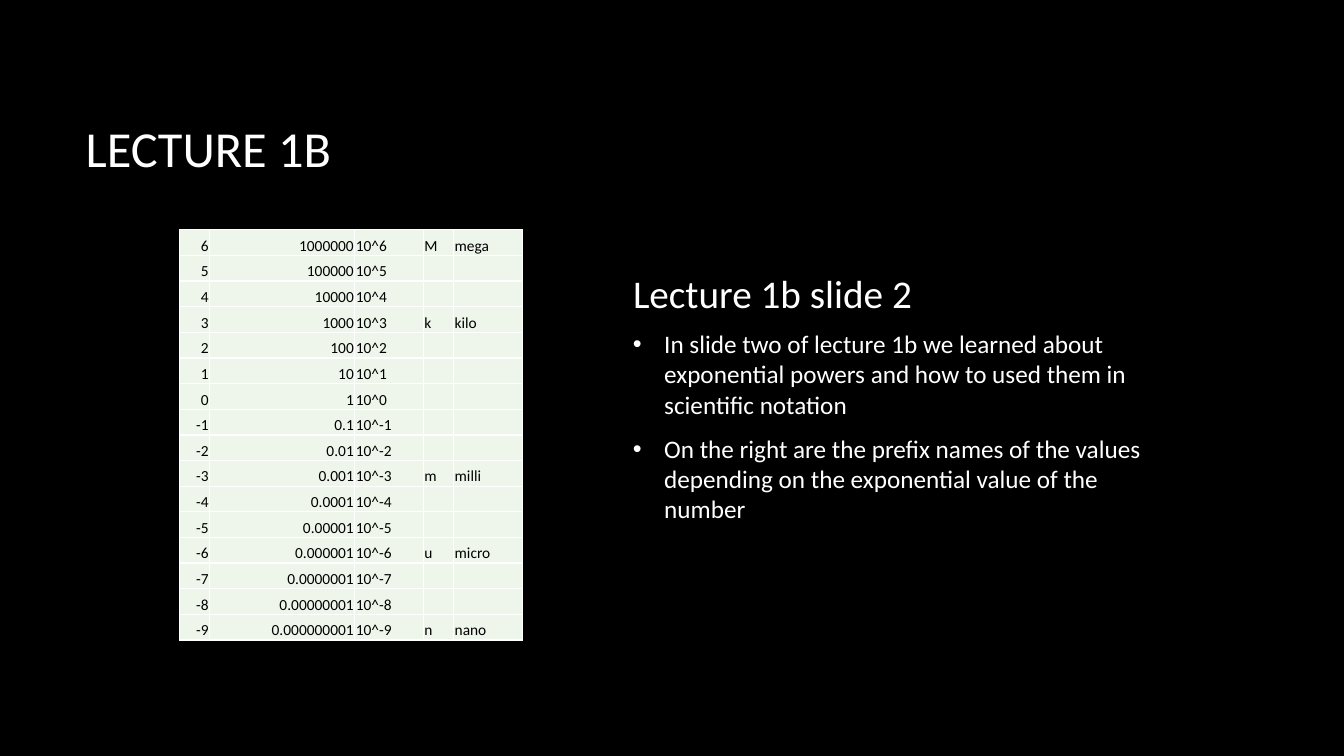
from pptx import Presentation
from pptx.dml.color import RGBColor
from pptx.enum.text import MSO_ANCHOR, MSO_AUTO_SIZE, PP_ALIGN
from pptx.oxml.ns import qn
from pptx.util import Inches, Pt
from lxml import etree

LEFT, RIGHT = PP_ALIGN.LEFT, PP_ALIGN.RIGHT
TOP, MIDDLE, BOTTOM = MSO_ANCHOR.TOP, MSO_ANCHOR.MIDDLE, MSO_ANCHOR.BOTTOM
NO_AUTOFIT = MSO_AUTO_SIZE.NONE
TITLE_ONLY = 5

PREFIXES = {6: ("M", "mega"), 3: ("k", "kilo"), -3: ("m", "milli"),
            -6: ("u", "micro"), -9: ("n", "nano")}
EXPONENTS = range(6, -10, -1)
COLUMN_WIDTHS = [0.3, 1.44, 0.68, 0.3, 0.68]
COLUMN_ALIGNMENTS = [RIGHT, RIGHT, LEFT, LEFT, LEFT]
TABLE_HEIGHT = 4.07


def color(value):
    return RGBColor.from_string(value)


def apply_format(target, values):
    for name, value in values.items():
        setattr(target, name, value)


class LectureSlide:
    font_name = "Calibri"
    text_color = "FFFFFF"
    cell_text_color = "000000"
    cell_fill = "EEF6EB"
    border_color = "FFFFFF"

    def __init__(self, deck, background):
        self.page = deck.slides.add_slide(deck.slide_layouts[TITLE_ONLY])
        self.page.background.fill.solid()
        self.page.background.fill.fore_color.rgb = color(background)

    def add_span(self, para, text, size, text_color):
        span = para.add_run()
        span.text = text
        apply_format(span.font, {"name": self.font_name, "size": Pt(size)})
        span.font.color.rgb = color(text_color)

    def place(self, box, left, top, width, height, anchor):
        apply_format(box, {"left": Inches(left), "top": Inches(top),
                           "width": Inches(width), "height": Inches(height)})
        apply_format(box.text_frame, {"word_wrap": True, "auto_size": NO_AUTOFIT,
                                      "vertical_anchor": anchor})

    def title(self, text, *bounds):
        box = self.page.shapes.title
        self.place(box, *bounds, MIDDLE)
        para = box.text_frame.paragraphs[0]
        para.alignment = LEFT
        self.add_span(para, text, 36, self.text_color)

    def text(self, lines, size, *bounds, anchor=TOP, bulleted=False):
        box = self.page.shapes.add_textbox(0, 0, 0, 0)
        self.place(box, *bounds, anchor)
        frame = box.text_frame
        for index, line in enumerate(lines):
            para = frame.add_paragraph() if index else frame.paragraphs[0]
            apply_format(para, {"alignment": LEFT, "space_after": Pt(10)})
            if bulleted:
                self.bullet(para)
            self.add_span(para, line, size, self.text_color)

    def bullet(self, para):
        properties = para._p.get_or_add_pPr()
        indent = Inches(0.31)
        properties.set("marL", str(indent))
        properties.set("indent", str(-indent))
        bullet_color = etree.SubElement(properties, qn("a:buClr"))
        etree.SubElement(bullet_color, qn("a:srgbClr"), val=self.text_color)
        etree.SubElement(properties, qn("a:buFont"), typeface="Arial")
        etree.SubElement(properties, qn("a:buChar"), char="•")

    def table(self, rows, left, top, height):
        frame = self.page.shapes.add_table(
            len(rows), len(COLUMN_WIDTHS), Inches(left), Inches(top),
            Inches(sum(COLUMN_WIDTHS)), Inches(height))
        grid = frame.table
        apply_format(grid, {"first_row": False, "horz_banding": False})
        for column, width in zip(grid.columns, COLUMN_WIDTHS):
            column.width = Inches(width)
        for row, values in zip(grid.rows, rows):
            for cell, value, alignment in zip(row.cells, values, COLUMN_ALIGNMENTS):
                self.cell(cell, value, alignment)

    def cell(self, cell, value, alignment):
        inset = Inches(0.01)
        apply_format(cell, {"margin_left": inset, "margin_right": inset,
                            "margin_top": inset, "margin_bottom": 0,
                            "vertical_anchor": BOTTOM})
        for side in ("L", "R", "T", "B"):
            border = etree.SubElement(cell._tc.get_or_add_tcPr(),
                                      qn("a:ln" + side), w=str(Pt(1)))
            fill = etree.SubElement(border, qn("a:solidFill"))
            etree.SubElement(fill, qn("a:srgbClr"), val=self.border_color)
        cell.fill.solid()
        cell.fill.fore_color.rgb = color(self.cell_fill)
        para = cell.text_frame.paragraphs[0]
        para.alignment = alignment
        if value:
            self.add_span(para, value, 11, self.cell_text_color)
        else:
            etree.SubElement(para._p, qn("a:endParaRPr"), sz="1100")


def prefix_row(exponent):
    decimals = max(0, -exponent)
    return (str(exponent), f"{10.0 ** exponent:.{decimals}f}", f"10^{exponent}",
            *PREFIXES.get(exponent, ("", "")))


def main():
    deck = Presentation()
    deck.slide_width, deck.slide_height = Inches(13.33), Inches(7.5)
    slide = LectureSlide(deck, "000000")
    slide.title("LECTURE 1B", 0.75, 0.67, 11.08, 1.59)
    slide.text(["Lecture 1b slide 2"], 28, 6.18, 2.56, 5.15, 0.63, anchor=BOTTOM)
    slide.text([
        "In slide two of lecture 1b we learned about exponential powers "
        "and how to used them in scientific notation",
        "On the right are the prefix names of the values depending on "
        "the exponential value of the number",
    ], 18, 6.18, 3.21, 5.46, 3.19, bulleted=True)
    slide.table([prefix_row(exponent) for exponent in EXPONENTS],
                1.78, 2.28, TABLE_HEIGHT)
    deck.save("out.pptx")


if __name__ == "__main__":
    main()
